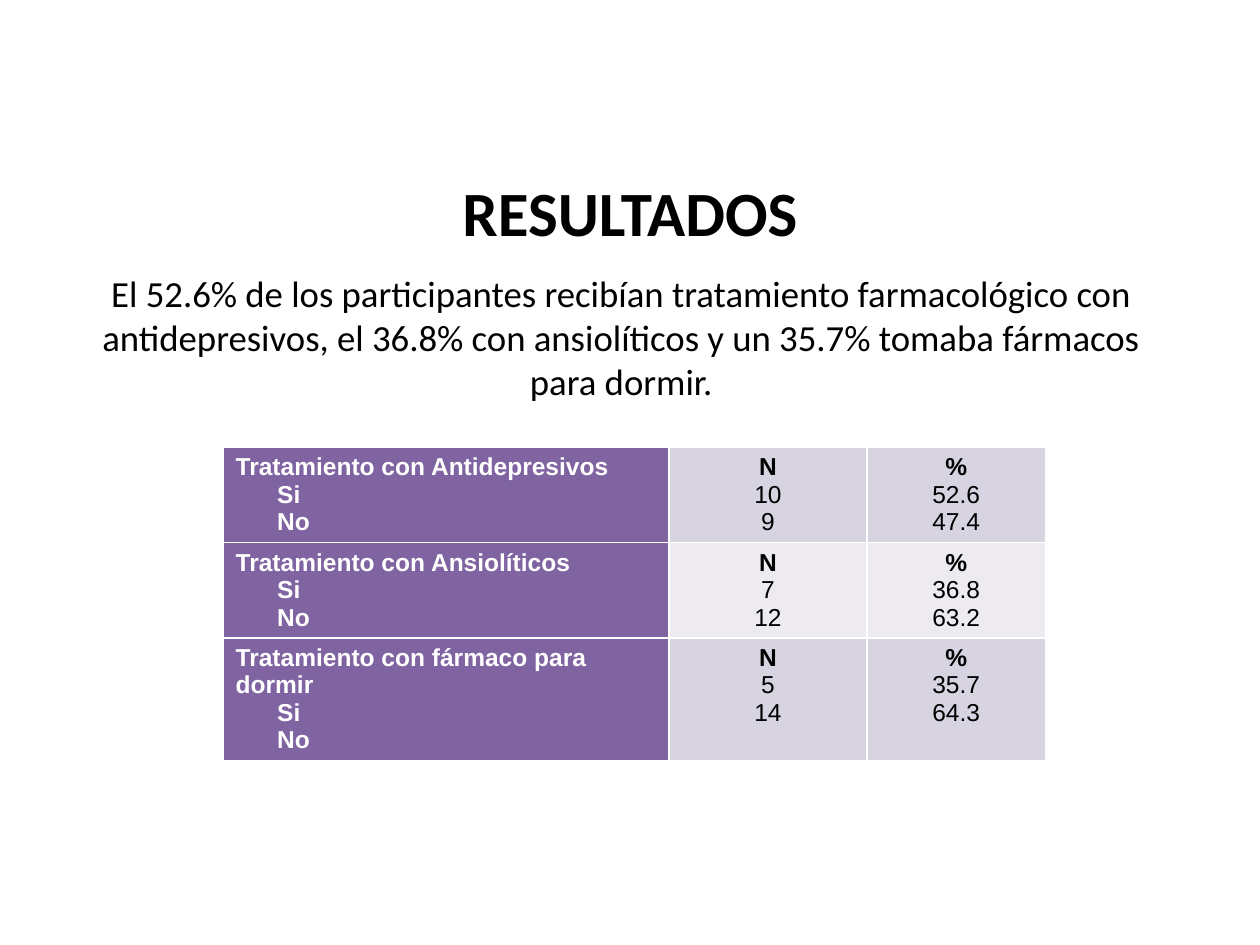
from dataclasses import dataclass

from lxml import etree
from pptx import Presentation
from pptx.dml.color import RGBColor
from pptx.enum.text import MSO_ANCHOR, MSO_AUTO_SIZE, PP_ALIGN
from pptx.oxml.ns import qn
from pptx.util import Inches, Pt

CENTER, LEFT = PP_ALIGN.CENTER, PP_ALIGN.LEFT
MIDDLE = MSO_ANCHOR.MIDDLE
NO_AUTOFIT = MSO_AUTO_SIZE.NONE


@dataclass(frozen=True)
class Theme:
    text_font: str = "Calibri"
    table_font: str = "Arial"
    title_size: int = 36
    body_size: int = 21
    table_size: int = 14
    black: str = "000000"
    white: str = "FFFFFF"
    label_fill: str = "8064A2"
    band_fills: tuple = ("D8D3E0", "EDEAF0")
    border_width: int = 1


THEME = Theme()

SUMMARY = (
    "El 52.6% de los participantes recibían tratamiento farmacológico con "
    "antidepresivos, el 36.8% con ansiolíticos y un 35.7% tomaba fármacos "
    "para dormir."
)
ANSWERS = ("Si", "No")
TREATMENTS = [
    ("Tratamiento con Antidepresivos", ("10", "9"), ("52.6", "47.4")),
    ("Tratamiento con Ansiolíticos", ("7", "12"), ("36.8", "63.2")),
    ("Tratamiento con fármaco para dormir", ("5", "14"), ("35.7", "64.3")),
]
COLUMN_WIDTHS = (3.54, 1.57, 1.42)
ROW_HEIGHTS = (0.75, 0.75, 0.97)
ANSWER_INDENT = 0.33


def format_paragraph(paragraph, name, size, color, bold, alignment):
    paragraph.alignment = alignment
    font = paragraph.font
    font.name, font.size, font.bold = name, Pt(size), bold
    font.color.rgb = RGBColor.from_string(color)


def fill_placeholder(placeholder, box, text, size, bold):
    """Move a placeholder to its box and give it one centred paragraph."""
    left, top, width, height = map(Inches, box)
    placeholder.left, placeholder.top = left, top
    placeholder.width, placeholder.height = width, height
    frame = placeholder.text_frame
    frame.text = text
    frame.auto_size = NO_AUTOFIT
    paragraph = frame.paragraphs[0]
    paragraph.space_before = Pt(0)
    properties = paragraph._p.get_or_add_pPr()
    properties.set("marL", "0")
    properties.set("indent", "0")
    etree.SubElement(properties, qn("a:buNone"))
    format_paragraph(paragraph, THEME.text_font, size, THEME.black, bold, CENTER)


def add_borders(cell):
    properties = cell._tc.get_or_add_tcPr()
    for position, side in enumerate(("a:lnL", "a:lnR", "a:lnT", "a:lnB")):
        line = etree.Element(qn(side), w=str(Pt(THEME.border_width)))
        fill = etree.SubElement(line, qn("a:solidFill"))
        etree.SubElement(fill, qn("a:srgbClr"), val=THEME.white)
        properties.insert(position, line)


def fill_cell(cell, heading, values, fill, is_label):
    """Write a bold heading with its values below it."""
    cell.fill.solid()
    cell.fill.fore_color.rgb = RGBColor.from_string(fill)
    add_borders(cell)
    cell.text = "\n".join((heading, *values))
    color = THEME.white if is_label else THEME.black
    alignment = LEFT if is_label else CENTER
    for index, paragraph in enumerate(cell.text_frame.paragraphs):
        if is_label and index:
            paragraph._p.get_or_add_pPr().set("marL", str(Inches(ANSWER_INDENT)))
        bold = is_label or index == 0
        format_paragraph(paragraph, THEME.table_font, THEME.table_size,
                         color, bold, alignment)


def add_treatment_table(slide, left, top):
    box = map(Inches, (left, top, sum(COLUMN_WIDTHS), sum(ROW_HEIGHTS)))
    table = slide.shapes.add_table(len(TREATMENTS), len(COLUMN_WIDTHS), *box).table
    table.first_row = table.horz_banding = False
    for column, width in zip(table.columns, COLUMN_WIDTHS):
        column.width = Inches(width)
    for row, height in zip(table.rows, ROW_HEIGHTS):
        row.height = Inches(height)
    for index, (treatment, counts, percentages) in enumerate(TREATMENTS):
        label, count, percentage = table.rows[index].cells
        band = THEME.band_fills[index % len(THEME.band_fills)]
        fill_cell(label, treatment, ANSWERS, THEME.label_fill, True)
        fill_cell(count, "N", counts, band, False)
        fill_cell(percentage, "%", percentages, band, False)


def add_results_slide(presentation):
    slide = presentation.slides.add_slide(presentation.slide_layouts[1])
    title, body = slide.shapes.title, slide.placeholders[1]
    fill_placeholder(title, (0, 1.25, 10, 0.85), "RESULTADOS", THEME.title_size, True)
    title.text_frame.vertical_anchor = MIDDLE
    fill_placeholder(body, (0.43, 2.1, 9, 1.18), SUMMARY, THEME.body_size, False)
    add_treatment_table(slide, 1.77, 3.55)


def main():
    presentation = Presentation()
    presentation.slide_width, presentation.slide_height = Inches(10), Inches(7.5)
    add_results_slide(presentation)
    presentation.save("out.pptx")


if __name__ == "__main__":
    main()
